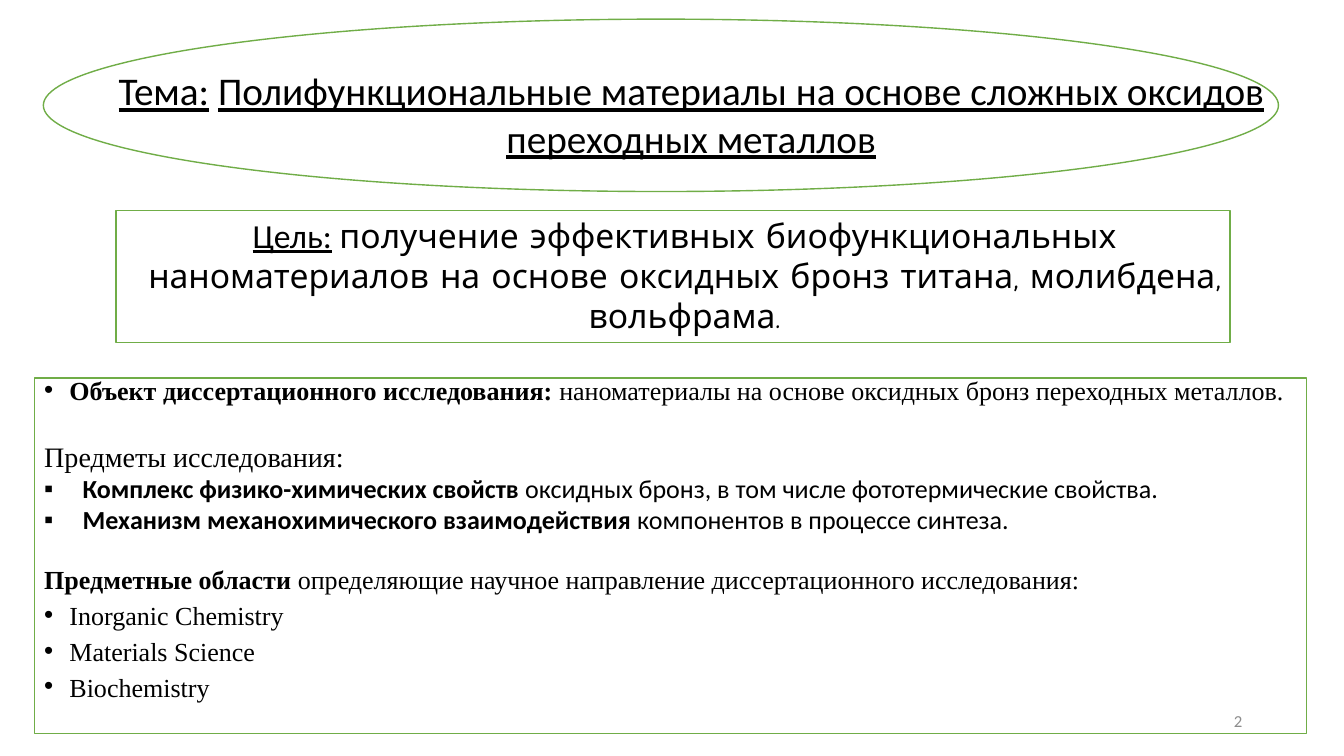
from dataclasses import dataclass

from lxml.etree import SubElement
from pptx import Presentation
from pptx.dml.color import RGBColor
from pptx.enum.shapes import MSO_SHAPE as SHAPE
from pptx.enum.text import MSO_ANCHOR as ANCHOR, PP_ALIGN as ALIGN
from pptx.oxml.ns import qn
from pptx.util import Inches, Pt


@dataclass(frozen=True)
class Theme:
    ink: str = "000000"
    paper: str = "FFFFFF"
    outline: str = "70AD47"
    muted: str = "8C8C8C"
    sans: str = "Calibri"
    serif: str = "Times New Roman"
    comic: str = "Comic Neue"
    title: float = 28
    goal: float = 24
    heading: float = 20.1
    body: float = 18.6
    number: float = 12


T = Theme()


def add_run(p, text, font=T.sans, size=T.body, color=T.ink, bold=False, underline=False):
    r = p.add_run()
    r.text = text
    r.font.name, r.font.size = font, Pt(size)
    r.font.bold, r.font.underline = bold, underline
    r.font.color.rgb = RGBColor.from_string(color)


def add_frame(slide, box, kind, fill=None):
    """Add a green outline of the given preset shape."""
    s = slide.shapes.add_shape(kind, *map(Inches, box))
    s.shadow.inherit = False
    if fill:
        s.fill.solid()
        s.fill.fore_color.rgb = RGBColor.from_string(fill)
    else:
        s.fill.background()
    s.line.color.rgb = RGBColor.from_string(T.outline)
    s.line.width = Pt(1)
    return s


def add_textbox(slide, box, align, anchor=ANCHOR.TOP):
    """Add a wrapping text box and return its first paragraph."""
    tf = slide.shapes.add_textbox(*map(Inches, box)).text_frame
    tf.word_wrap = True
    tf.vertical_anchor = anchor
    p = tf.paragraphs[0]
    p.alignment = align
    return p


def set_bullet(p, char, indent):
    pPr = p._p.get_or_add_pPr()
    pPr.set("marL", str(Inches(indent)))
    pPr.set("indent", str(-Inches(indent)))
    SubElement(pPr, qn("a:buFont")).set("typeface", "Arial")
    SubElement(pPr, qn("a:buChar")).set("char", char)


def add_topic(slide, box):
    p = add_textbox(slide, box, ALIGN.CENTER, ANCHOR.MIDDLE)
    add_run(p, "Тема:", size=T.title, underline=True)
    add_run(p, " ", size=T.title)
    add_run(p, "Полифункциональные материалы на основе сложных оксидов переходных металлов",
            size=T.title, underline=True)


def add_goal(slide, box):
    p = add_textbox(slide, box, ALIGN.CENTER)
    add_run(p, "Цель:", size=T.goal, underline=True)
    add_run(p, " ", size=T.goal)
    add_run(p, "получение эффективных биофункциональных наноматериалов на основе "
               "оксидных бронз титана, молибдена, вольфрама.", font=T.comic, size=T.goal)


def add_research(slide, box):
    tf = add_frame(slide, box, SHAPE.RECTANGLE, T.paper).text_frame
    tf.word_wrap = True
    tf.vertical_anchor = ANCHOR.TOP

    def add_line(strong, plain, font=T.serif, size=T.body, spacing=0.7, before=10,
                 bullet=None, indent=0.25):
        p = tf.paragraphs[0] if not tf.paragraphs[0].runs else tf.add_paragraph()
        p.alignment = ALIGN.LEFT
        p.line_spacing, p.space_before = spacing, Pt(before)
        if bullet:
            set_bullet(p, bullet, indent)
        if strong:
            add_run(p, strong, font, size, bold=True)
        add_run(p, plain, font, size)

    add_line("Объект диссертационного исследования: ",
             "наноматериалы на основе оксидных бронз переходных металлов.", bullet="•")
    add_line("", "Предметы исследования:", size=T.heading, before=31.5)
    for strong, plain in (
        ("Комплекс физико-химических свойств ",
         "оксидных бронз, в том числе фототермические свойства."),
        ("Механизм механохимического взаимодействия ", "компонентов в процессе синтеза."),
    ):
        add_line(strong, plain, font=T.sans, spacing=1.0, before=0, bullet="▪", indent=0.38)
    add_line("Предметные области ",
             "определяющие научное направление диссертационного исследования:", before=26.5)
    for field in ("Inorganic Chemistry", "Materials Science", "Biochemistry"):
        add_line("", field, bullet="•")


def add_slide_number(slide, box, number):
    p = add_textbox(slide, box, ALIGN.RIGHT, ANCHOR.MIDDLE)
    add_run(p, str(number), size=T.number, color=T.muted)


def main():
    prs = Presentation()
    prs.slide_width, prs.slide_height = Inches(13.33), Inches(7.5)
    slide = prs.slides.add_slide(prs.slide_layouts[6])
    add_topic(slide, (0.76, 0.1, 12.19, 2.06))
    add_research(slide, (0.34, 3.75, 12.62, 3.53))
    add_goal(slide, (1.18, 2.08, 11.22, 1.31))
    add_frame(slide, (1.15, 2.09, 11.05, 1.31), SHAPE.RECTANGLE)
    add_frame(slide, (0.43, 0.19, 12.25, 1.71), SHAPE.OVAL)
    add_slide_number(slide, (9.42, 6.95, 3, 0.4), 2)
    prs.save("out.pptx")


if __name__ == "__main__":
    main()
